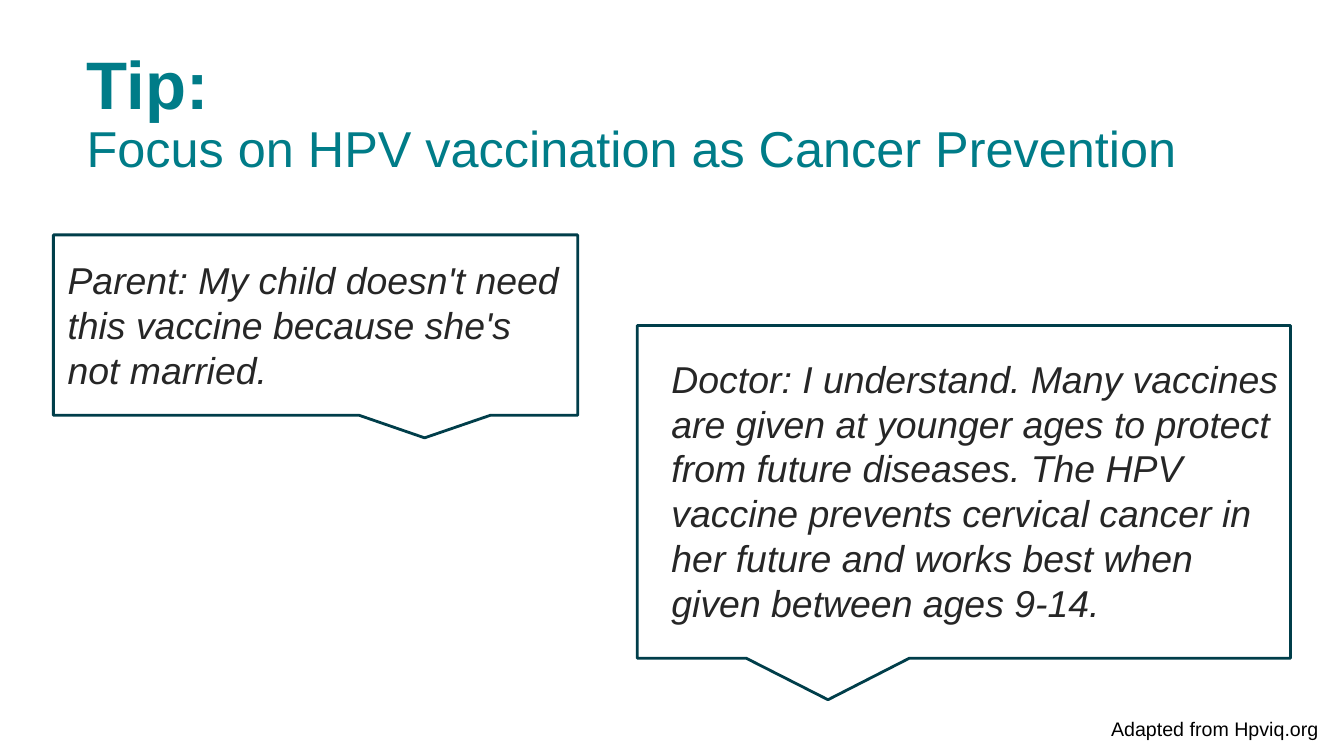
from dataclasses import dataclass

from pptx import Presentation
from pptx import util as u
from pptx.dml.color import RGBColor
from pptx.enum import shapes, text


@dataclass(frozen=True)
class Theme:
    font: str = "Arial"
    teal: str = "007C88"
    edge: str = "003E4A"
    ink: str = "262626"
    black: str = "000000"
    head: float = 48
    sub: float = 36
    talk: float = 26.7
    note: float = 14
    rule: float = 2


THEME = Theme()
PAD = (0.13, 0.07, 0.13, 0.07)
FLUSH = (0, 0, 0, 0)


def put(item, values):
    for name, value in values.items():
        setattr(item, name, value)


def place(box):
    return [u.Inches(n) for n in box]


def style(para, size, color, **extra):
    put(para.font, {"name": THEME.font, "size": u.Pt(size), **extra})
    para.font.color.rgb = RGBColor.from_string(color)


def frame(shape, pad, **extra):
    sides = ("margin_left", "margin_top", "margin_right", "margin_bottom")
    put(shape.text_frame, {**dict(zip(sides, place(pad))), **extra})
    return shape.text_frame


# Title placeholder: one paragraph per (words, size, bold)
def add_title(slide, box, lines):
    title = slide.shapes.title
    put(title, dict(zip(("left", "top", "width", "height"), place(box))))
    body = frame(title, PAD, word_wrap=True,
                 vertical_anchor=text.MSO_ANCHOR.MIDDLE,
                 auto_size=text.MSO_AUTO_SIZE.NONE)
    for i, (words, size, bold) in enumerate(lines):
        para = body.add_paragraph() if i else body.paragraphs[0]
        put(para, {"text": words, "line_spacing": 0.9,
                   "alignment": text.PP_ALIGN.LEFT})
        style(para, size, THEME.teal, bold=bold)


# Plain text box
def add_text(slide, box, words, size, color, pad=FLUSH, **extra):
    label = slide.shapes.add_textbox(*place(box))
    body = frame(label, pad, word_wrap=True,
                 auto_size=text.MSO_AUTO_SIZE.SHAPE_TO_FIT_TEXT)
    para = body.paragraphs[0]
    para.text = words
    style(para, size, color, **extra)


# Speech outline; lean is the tip's offset from the centre, as a share of width
def add_bubble(slide, box, lean):
    kind = shapes.MSO_SHAPE.ROUNDED_RECTANGULAR_CALLOUT
    bubble = slide.shapes.add_shape(kind, *place(box))
    for i, value in enumerate((lean, 0.625, 0)):
        bubble.adjustments[i] = value
    bubble.shadow.inherit = False
    bubble.fill.background()
    bubble.line.color.rgb = RGBColor.from_string(THEME.edge)
    bubble.line.width = u.Pt(THEME.rule)


def main():
    deck = Presentation()
    put(deck, {"slide_width": u.Inches(13.33), "slide_height": u.Inches(7.5)})
    slide = deck.slides.add_slide(deck.slide_layouts[5])

    add_title(slide, (0.73, 0.4, 12.6, 1.48), [
        ("Tip:", THEME.head, True),
        ("Focus on HPV vaccination as Cancer Prevention", THEME.sub, False),
    ])

    # Dialogue
    talks = [
        ((0.53, 2.33, 5.2, 1.79), 0.208, (0.67, 2.55, 4.93, 1.35),
         "Parent: My child doesn't need this vaccine because she's "
         "not married."),
        ((6.32, 3.23, 6.48, 3.3), -0.208, (6.66, 3.53, 6.14, 2.69),
         "Doctor: I understand. Many vaccines are given at younger ages "
         "to protect from future diseases. The HPV vaccine prevents "
         "cervical cancer in her future and works best when given "
         "between ages 9-14."),
    ]
    for outline, lean, box, words in talks:
        add_bubble(slide, outline, lean)
        add_text(slide, box, words, THEME.talk, THEME.ink, italic=True)

    # Credit
    add_text(slide, (10.89, 7.04, 2.44, 0.37), "Adapted from Hpviq.org",
             THEME.note, THEME.black, PAD)

    deck.save("out.pptx")


if __name__ == "__main__":
    main()
